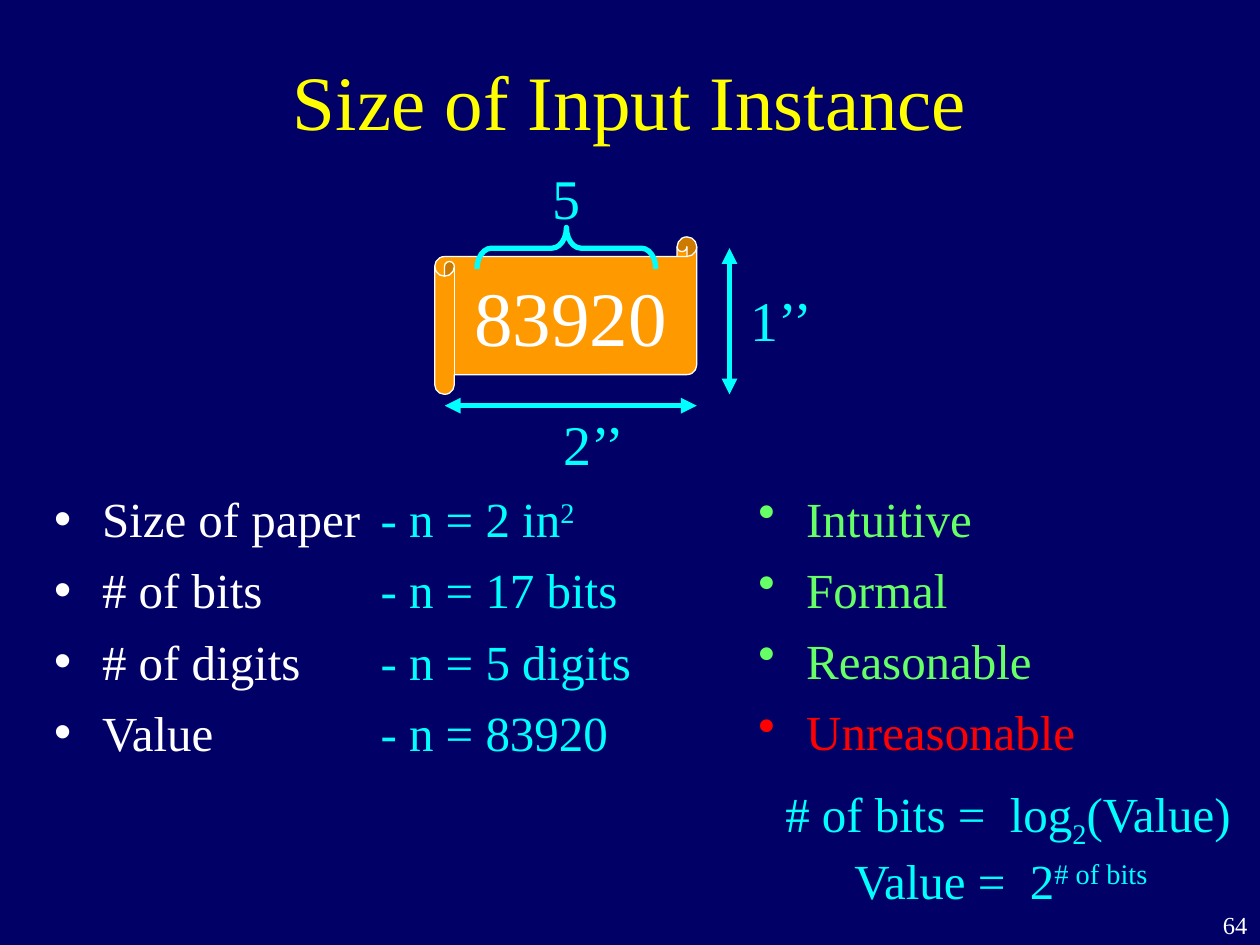
import dataclasses
import typing

import pptx
import pptx.dml.color
import pptx.enum.shapes
import pptx.enum.text
import pptx.oxml
import pptx.oxml.ns
import pptx.util

UNIT = 9144  # EMU per px, 100 px to the inch
FONT = "Times New Roman"
HUE = {"back": "000066", "title": "FFFF00", "text": "FFFFFF", "note": "00FFFF",
       "good": "66FF66", "bad": "FF0000", "scroll": "FF9900"}
ALIGN = pptx.enum.text.PP_ALIGN
ANCHOR = pptx.enum.text.MSO_ANCHOR
SHAPE = pptx.enum.shapes.MSO_SHAPE
INDENT = 38


@dataclasses.dataclass
class Box:
    left: int
    top: int
    width: int
    height: int


@dataclasses.dataclass
class Run:
    text: str
    hue: str = "text"
    size: int = 28
    base: int = 0  # percent raised or lowered


@dataclasses.dataclass
class Column:
    box: Box
    rows: list[list[Run]]
    bullet: bool = True


@dataclasses.dataclass
class Arrow:
    start: tuple[int, int]
    end: tuple[int, int]


def px(num: int) -> pptx.util.Emu:
    return pptx.util.Emu(num * UNIT)


def area(box: Box) -> list[pptx.util.Emu]:
    return [px(num) for num in dataclasses.astuple(box)]


def color(name: str) -> pptx.dml.color.RGBColor:
    return pptx.dml.color.RGBColor.from_string(HUE[name])


def paint(target: typing.Any, name: str) -> None:
    target.solid()
    target.fore_color.rgb = color(name)


def add_xml(parent: typing.Any, tag: str, **attrs: str) -> None:
    node = pptx.oxml.parse_xml(f"<a:{tag} {pptx.oxml.ns.nsdecls('a')}/>")
    for key, value in attrs.items():
        node.set(key, value)
    parent.append(node)


def place(shape: typing.Any, box: Box) -> None:
    for key, value in zip(("left", "top", "width", "height"), area(box)):
        setattr(shape, key, value)


def write(para: typing.Any, runs: list[Run]) -> None:
    for item in runs:
        run = para.add_run()
        run.text = item.text
        style = {"name": FONT, "size": pptx.util.Pt(item.size), "bold": False}
        for key, value in style.items():
            setattr(run.font, key, value)
        run.font.color.rgb = color(item.hue)
        if item.base:
            run._r.get_or_add_rPr().set("baseline", str(item.base * 1000))


def fill_text(shape: typing.Any, runs: list[Run], align: ALIGN = ALIGN.LEFT,
              anchor: ANCHOR = ANCHOR.TOP, wrap: bool = False) -> None:
    frame = shape.text_frame
    style = {"auto_size": pptx.enum.text.MSO_AUTO_SIZE.NONE,
             "word_wrap": wrap, "vertical_anchor": anchor}
    for key, value in style.items():
        setattr(frame, key, value)
    para = frame.paragraphs[0]
    para.alignment = align
    write(para, runs)


def fill_list(shape: typing.Any, col: Column) -> None:
    place(shape, col.box)
    frame = shape.text_frame
    frame.word_wrap = True
    frame.auto_size = pptx.enum.text.MSO_AUTO_SIZE.NONE
    for num, runs in enumerate(col.rows):
        para = frame.add_paragraph() if num else frame.paragraphs[0]
        para.space_before = pptx.util.Pt(7)
        props = para._p.get_or_add_pPr()
        props.set("marL", str(px(INDENT)))
        props.set("indent", str(px(-INDENT)))
        if col.bullet:
            add_xml(props, "buChar", char="•")
        else:
            add_xml(props, "buNone")
        write(para, runs)


def add_text(shapes: typing.Any, box: Box, runs: list[Run], **style: typing.Any) -> None:
    fill_text(shapes.add_textbox(*area(box)), runs, **style)


def add_arrow(shapes: typing.Any, arrow: Arrow) -> None:
    ends = [px(num) for num in arrow.start + arrow.end]
    line = shapes.add_connector(pptx.enum.shapes.MSO_CONNECTOR.STRAIGHT, *ends)
    line.line.width = pptx.util.Pt(3)
    line.line.color.rgb = color("note")
    for tag in ("headEnd", "tailEnd"):
        add_xml(line.line._get_or_add_ln(), tag, type="triangle")
    add_xml(line._element.spPr, "effectLst")


def draw_paper(shapes: typing.Any) -> None:
    # Scroll with the number
    scroll = shapes.add_shape(SHAPE.HORIZONTAL_SCROLL, *area(Box(345, 188, 208, 125)))
    scroll.shadow.inherit = False
    paint(scroll.fill, "scroll")
    paint(scroll.line.fill, "text")
    scroll.line.width = pptx.util.Pt(0.75)
    fill_text(scroll, [Run("83920", size=44)], ALIGN.CENTER, ANCHOR.MIDDLE)

    # Brace over the digits
    brace = shapes.add_shape(SHAPE.LEFT_BRACE, *area(Box(433, 126, 33, 142)))
    brace.shadow.inherit = False
    brace.rotation = 90
    brace.adjustments[0] = 0.35
    brace.fill.background()
    paint(brace.line.fill, "note")
    brace.line.width = pptx.util.Pt(3)

    # Dimensions
    for arrow in (Arrow((353, 322), (553, 322)), Arrow((579, 197), (579, 313))):
        add_arrow(shapes, arrow)
    for text, box in (("2’’", Box(437, 320, 72, 63)), ("5", Box(429, 125, 42, 63)),
                      ("1’’", Box(586, 222, 72, 63))):
        add_text(shapes, box, [Run(text, "note", 32)])


def main() -> None:
    deck = pptx.Presentation()
    deck.slide_width, deck.slide_height = px(1000), px(750)
    slide = deck.slides.add_slide(deck.slide_layouts[3])
    paint(slide.background.fill, "back")

    # Title
    title = slide.shapes.title
    place(title, Box(75, 17, 850, 125))
    fill_text(title, [Run("Size of Input Instance", "title", 44)],
              ALIGN.CENTER, ANCHOR.MIDDLE, True)

    # Measures, sizes and verdicts
    names = ("Size of paper", "# of bits", "# of digits", "Value")
    sizes = ("- n = 2 in", "- n = 17 bits", "- n = 5 digits", "- n = 83920")
    marks = {"Intuitive": "good", "Formal": "good", "Reasonable": "good",
             "Unreasonable": "bad"}
    cols = [Column(Box(33, 383, 292, 450), [[Run(name)] for name in names]),
            Column(Box(292, 383, 317, 450), [[Run(size, "note")] for size in sizes], False),
            Column(Box(592, 383, 342, 450), [[Run(*mark)] for mark in marks.items()])]
    cols[1].rows[0].append(Run("2", "note", base=30))
    holders = [slide.placeholders[1], slide.placeholders[2],
               slide.shapes.add_textbox(*area(cols[2].box))]
    for holder, col in zip(holders, cols):
        fill_list(holder, col)

    # Formula and page number
    add_text(slide.shapes, Box(600, 617, 400, 160),
             [Run("# of bits =  log", "note"), Run("2", "note", base=-25),
              Run("(Value) Value =  2", "note"), Run("# of bits  ", "note", base=30)],
             align=ALIGN.CENTER, wrap=True)
    add_text(slide.shapes, Box(950, 717, 50, 33), [Run("64", size=14)],
             align=ALIGN.RIGHT, wrap=True)

    draw_paper(slide.shapes.add_group_shape().shapes)
    deck.save("out.pptx")


if __name__ == "__main__":
    main()
